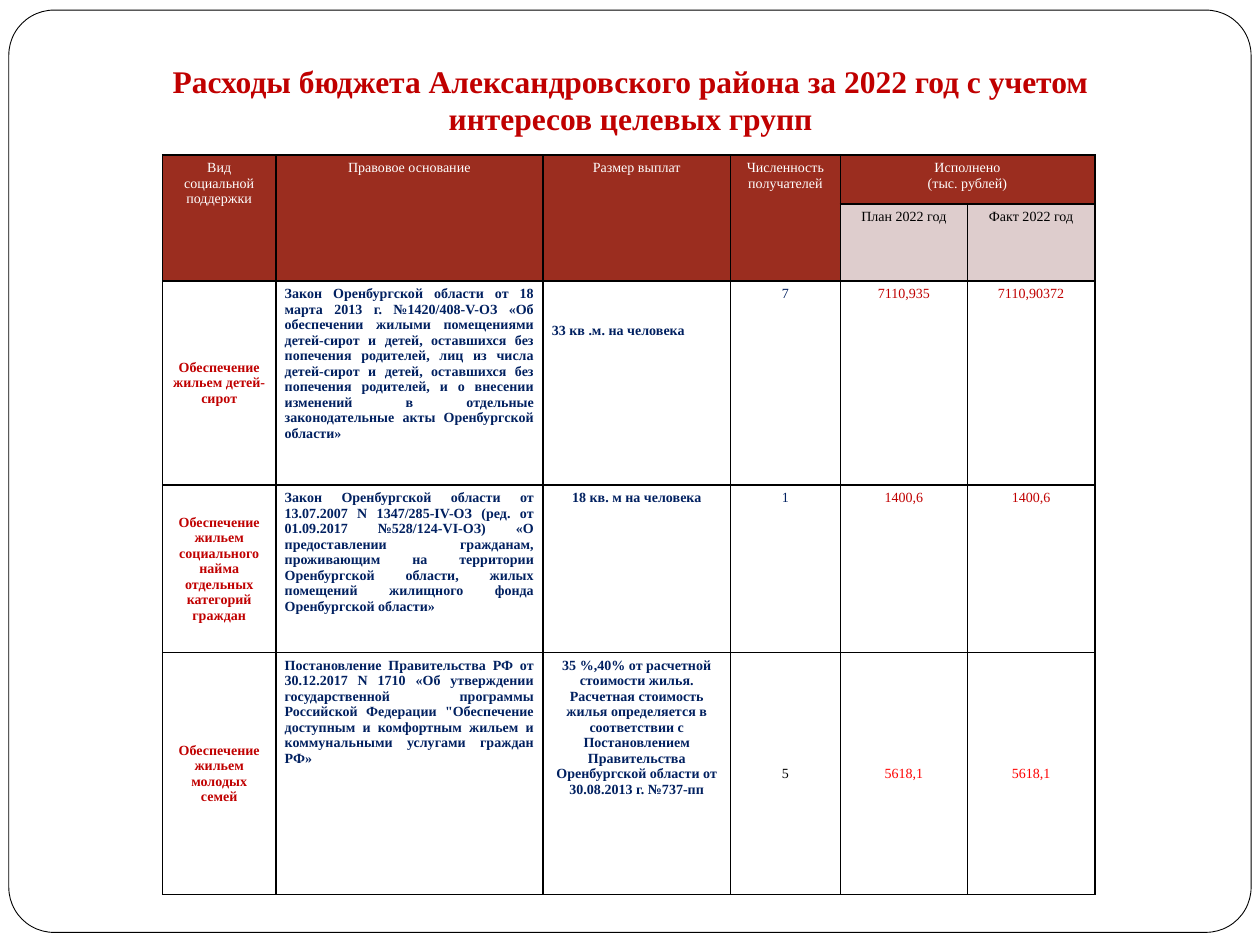
from lxml import etree
from pptx import Presentation
from pptx.dml.color import RGBColor
from pptx.enum.shapes import MSO_SHAPE
from pptx.enum.text import MSO_ANCHOR, PP_ALIGN
from pptx.oxml.ns import qn
from pptx.util import Inches, Pt

CENTER, LEFT, JUSTIFY = PP_ALIGN.CENTER, PP_ALIGN.LEFT, PP_ALIGN.JUSTIFY
TOP, MIDDLE = MSO_ANCHOR.TOP, MSO_ANCHOR.MIDDLE

WHITE = RGBColor(0xFF, 0xFF, 0xFF)
BLACK = RGBColor(0x00, 0x00, 0x00)
CRIMSON = RGBColor(0xC0, 0x00, 0x00)
RED = RGBColor(0xFF, 0x00, 0x00)
NAVY = RGBColor(0x00, 0x20, 0x60)
BRICK = RGBColor(0x9B, 0x2D, 0x1F)
PINK = RGBColor(0xDE, 0xCD, 0xCD)

FONT = "Times New Roman"
COLUMN_WIDTHS = [0.9, 2.12, 1.49, 0.87, 1.01, 1.01]
ROW_HEIGHTS = [0.39, 0.61, 1.62, 1.33, 1.92]
PADDING = (0.07, 0.04, 0.07, 0.04)
TIGHT_PADDING = (0.01, 0.01, 0.01, 0)

HEADINGS = ["Вид социальной поддержки", "Правовое основание", "Размер выплат",
            "Численность получателей", "Исполнено\n(тыс. рублей)"]
SUBHEADINGS = ["План 2022 год", "Факт 2022 год"]

# Support type, legal basis, payment size, recipients, plan, fact
SUPPORT_ROWS = [
    ["Обеспечение жильем детей-сирот",
     "Закон Оренбургской области от 18 марта 2013 г. №1420/408-V-ОЗ «Об "
     "обеспечении жилыми помещениями детей-сирот и детей, оставшихся без "
     "попечения родителей, лиц из числа детей-сирот и детей, оставшихся без "
     "попечения родителей, и о внесении изменений в отдельные "
     "законодательные акты Оренбургской области»",
     "33 кв .м. на человека", "7", "7110,935", "7110,90372"],
    ["Обеспечение жильем социального найма отдельных категорий граждан",
     "Закон Оренбургской области от 13.07.2007 N 1347/285-IV-ОЗ (ред. от "
     "01.09.2017 №528/124-VI-ОЗ) «О предоставлении гражданам, проживающим на "
     "территории Оренбургской области, жилых помещений жилищного фонда "
     "Оренбургской области»",
     "18 кв. м на человека", "1", "1400,6", "1400,6"],
    ["Обеспечение жильем молодых семей",
     "Постановление Правительства РФ от 30.12.2017 N 1710 «Об утверждении "
     "государственной программы Российской Федерации \"Обеспечение доступным "
     "и комфортным жильем и коммунальными услугами граждан РФ»",
     "35 %,40% от расчетной стоимости жилья. Расчетная стоимость жилья "
     "определяется в соответствии с Постановлением Правительства "
     "Оренбургской области от 30.08.2013 г. №737-пп",
     "5", "5618,1", "5618,1"],
]

# Format of each body column
COLUMN_FORMATS = [
    dict(color=CRIMSON, bold=True, anchor=MIDDLE),
    dict(color=NAVY, bold=True, align=JUSTIFY),
    dict(color=NAVY, bold=True),
    dict(color=NAVY),
    dict(color=CRIMSON),
    dict(color=CRIMSON),
]
# Cells that depart from their column, by support row and column
CELL_FORMATS = {
    (0, 2): dict(align=LEFT, padding=(0.07, 0.33, 0.07, 0.04)),
    (2, 3): dict(color=BLACK, anchor=MIDDLE, padding=TIGHT_PADDING),
    (2, 4): dict(color=RED, anchor=MIDDLE, padding=TIGHT_PADDING),
    (2, 5): dict(color=RED, anchor=MIDDLE, padding=TIGHT_PADDING),
}


def write_text(frame, text, size=8, color=BLACK, bold=False, align=CENTER):
    frame.word_wrap = True
    for index, line in enumerate(text.split("\n")):
        paragraph = frame.paragraphs[0] if index == 0 else frame.add_paragraph()
        paragraph.alignment = align
        run = paragraph.add_run()
        run.text = line
        run.font.name = FONT
        run.font.size = Pt(size)
        run.font.bold = bold
        run.font.color.rgb = color


def set_padding(cell, padding):
    (cell.margin_left, cell.margin_top,
     cell.margin_right, cell.margin_bottom) = map(Inches, padding)


def add_borders(cell, color=BLACK, width=1):
    properties = cell._tc.get_or_add_tcPr()
    for side in ("a:lnL", "a:lnR", "a:lnT", "a:lnB"):
        line = etree.SubElement(properties, qn(side), w=str(Pt(width)))
        fill = etree.SubElement(line, qn("a:solidFill"))
        etree.SubElement(fill, qn("a:srgbClr"), val=str(color))


def fill_cell(cell, text, fill=None, anchor=TOP, padding=PADDING, **text_format):
    if fill is None:
        cell.fill.background()
    else:
        cell.fill.solid()
        cell.fill.fore_color.rgb = fill
    cell.vertical_anchor = anchor
    set_padding(cell, padding)
    write_text(cell.text_frame, text, **text_format)


def add_page_frame(slide, left, top, width, height):
    shape = slide.shapes.add_shape(MSO_SHAPE.ROUNDED_RECTANGLE,
                                   left, top, width, height)
    shape.adjustments[0] = 0.049
    shape.shadow.inherit = False
    shape.fill.solid()
    shape.fill.fore_color.rgb = WHITE
    shape.line.color.rgb = BLACK
    shape.line.width = Pt(0.5)


def add_title(slide, left, top, width, height):
    box = slide.shapes.add_textbox(left, top, width, height)
    write_text(box.text_frame,
               "Расходы бюджета Александровского района за 2022 год "
               "с учетом интересов целевых групп",
               size=18, color=CRIMSON, bold=True)


def add_support_table(slide, left, top, width, height):
    table = slide.shapes.add_table(len(ROW_HEIGHTS), len(COLUMN_WIDTHS),
                                   left, top, width, height).table
    table.first_row = table.horz_banding = False
    for column, share in zip(table.columns, COLUMN_WIDTHS):
        column.width = int(width * share / sum(COLUMN_WIDTHS))
    for row, share in zip(table.rows, ROW_HEIGHTS):
        row.height = int(height * share / sum(ROW_HEIGHTS))
    for cell in table.iter_cells():
        set_padding(cell, PADDING)
        add_borders(cell)

    # Two-level header
    for column in range(4):
        table.cell(0, column).merge(table.cell(1, column))
    table.cell(0, 4).merge(table.cell(0, 5))
    for column, text in enumerate(HEADINGS):
        fill_cell(table.cell(0, column), text, fill=BRICK, color=WHITE)
    for column, text in enumerate(SUBHEADINGS, start=4):
        fill_cell(table.cell(1, column), text, fill=PINK)

    # Kinds of support
    for row, texts in enumerate(SUPPORT_ROWS):
        for column, text in enumerate(texts):
            cell_format = COLUMN_FORMATS[column] | CELL_FORMATS.get((row, column), {})
            fill_cell(table.cell(row + 2, column), text, **cell_format)


def main():
    presentation = Presentation()
    presentation.slide_width = Inches(10)
    presentation.slide_height = Inches(7.5)
    slide = presentation.slides.add_slide(presentation.slide_layouts[6])
    add_page_frame(slide, Inches(0.07), Inches(0.08), Inches(9.86), Inches(7.32))
    add_title(slide, Inches(0.83), Inches(0.44), Inches(8.35), Inches(0.71))
    add_support_table(slide, Inches(1.29), Inches(1.23),
                      Inches(sum(COLUMN_WIDTHS)), Inches(sum(ROW_HEIGHTS)))
    presentation.save("out.pptx")


if __name__ == "__main__":
    main()
